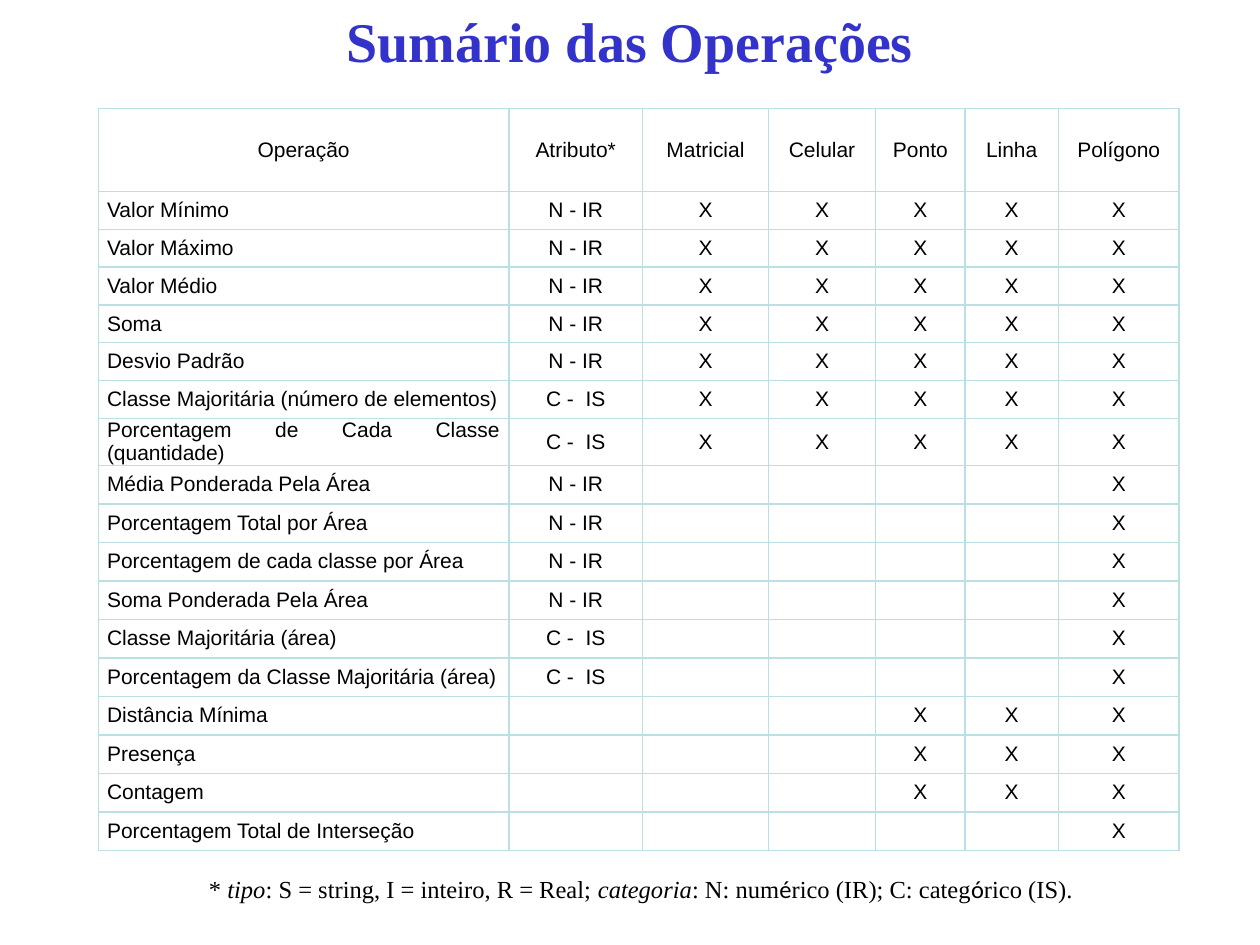
from lxml import etree
from pptx import Presentation
from pptx.dml.color import RGBColor
from pptx.enum import text as t
from pptx.oxml import ns
from pptx.util import Inches, Pt

HUES = {"title": "3333CC", "text": "000000", "grid": "BBE0E3", "back": "FFFFFF"}
SERIF, SANS, ACCENT = "Times New Roman", "Arial", "Calibri"
MID = t.MSO_ANCHOR.MIDDLE
CENTER, JUSTIFY = t.PP_ALIGN.CENTER, t.PP_ALIGN.JUSTIFY

HEAD = ["Operação", "Atributo*", "Matricial", "Celular", "Ponto", "Linha", "Polígono"]
WIDTHS = [3.26, 1.06, 1, 0.85, 0.71, 0.74, 0.96]
NUM, CAT = "N - IR", "C -  IS"
# Each group: attribute, number of marks counted from the right, operations
GROUPS = [
    (NUM, 5, ["Valor Mínimo", "Valor Máximo", "Valor Médio", "Soma", "Desvio Padrão"]),
    (CAT, 5, ["Classe Majoritária (número de elementos)",
              "Porcentagem de Cada Classe (quantidade)"]),
    (NUM, 1, ["Média Ponderada Pela Área", "Porcentagem Total por Área",
              "Porcentagem de cada classe por Área", "Soma Ponderada Pela Área"]),
    (CAT, 1, ["Classe Majoritária (área)", "Porcentagem da Classe Majoritária (área)"]),
    ("", 3, ["Distância Mínima", "Presença", "Contagem"]),
    ("", 1, ["Porcentagem Total de Interseção"]),
]
NOTE = [
    ("* ", SERIF, False), ("tipo", SERIF, True),
    (": S = string, I = inteiro, R = Real; ", SERIF, False),
    ("categoria", SERIF, True), (": N: num", SERIF, False), ("é", ACCENT, False),
    ("rico (IR); C: categ", SERIF, False), ("ó", ACCENT, False),
    ("rico (IS).", SERIF, False),
]


def add_run(par, words, hue, **form):
    run = par.add_run()
    run.text = words
    run.font.color.rgb = RGBColor.from_string(HUES[hue])
    for key, val in form.items():
        setattr(run.font, key, val)


def add_grid(cell):
    """Draw a thin line on all four sides of a cell."""
    props = cell._tc.get_or_add_tcPr()
    for side in ("lnL", "lnR", "lnT", "lnB"):
        line = etree.SubElement(props, ns.qn(f"a:{side}"), w=str(Pt(1)))
        fill = etree.SubElement(line, ns.qn("a:solidFill"))
        etree.SubElement(fill, ns.qn("a:srgbClr"), val=HUES["grid"])


deck = Presentation()
deck.slide_width, deck.slide_height = Inches(10), Inches(7.5)
slide = deck.slides.add_slide(deck.slide_layouts[5])

# Title
title = slide.shapes.title
title.left, title.top = Inches(0.5), Inches(-0.08)
title.width, title.height = Inches(9), Inches(0.79)
title.fill.solid()
title.fill.fore_color.rgb = RGBColor.from_string(HUES["back"])
frame = title.text_frame
frame.auto_size, frame.vertical_anchor = t.MSO_AUTO_SIZE.NONE, MID
par = frame.paragraphs[0]
par.alignment = CENTER
add_run(par, "Sumário das Operações", "title", name=SERIF, size=Pt(32), bold=True)

# Table of operations
rows = [HEAD]
for attr, marks, names in GROUPS:
    for name in names:
        rows.append([name, attr] + [""] * (5 - marks) + ["X"] * marks)
table = slide.shapes.add_table(len(rows), len(HEAD), Inches(0.78), Inches(0.86),
                               Inches(sum(WIDTHS)), Inches(5.76)).table
table.first_row = table.horz_banding = False
for col, width in zip(table.columns, WIDTHS):
    col.width = Inches(width)

side = Inches(0.07)
CELL = {"margin_left": side, "margin_right": side, "margin_top": 0,
        "margin_bottom": 0, "vertical_anchor": MID}
for r, row in enumerate(rows):
    table.rows[r].height = Inches(0.3 if r else 0.66)
    for c, words in enumerate(row):
        cell = table.cell(r, c)
        for key, val in CELL.items():
            setattr(cell, key, val)
        add_grid(cell)
        cell.fill.background()
        if words:
            par = cell.text_frame.paragraphs[0]
            par.alignment = JUSTIFY if r and not c else CENTER
            par.space_before = Pt(14)
            add_run(par, words, "text", name=SANS, size=Pt(12))

# Footnote
note = slide.shapes.add_textbox(Inches(1.56), Inches(6.88), Inches(7.11), Inches(0.34))
frame = note.text_frame
frame.word_wrap, frame.vertical_anchor = True, MID
frame.auto_size = t.MSO_AUTO_SIZE.SHAPE_TO_FIT_TEXT
par = frame.paragraphs[0]
par.alignment = JUSTIFY
for words, face, slant in NOTE:
    add_run(par, words, "text", name=face, size=Pt(14), italic=slant)

deck.save("out.pptx")
